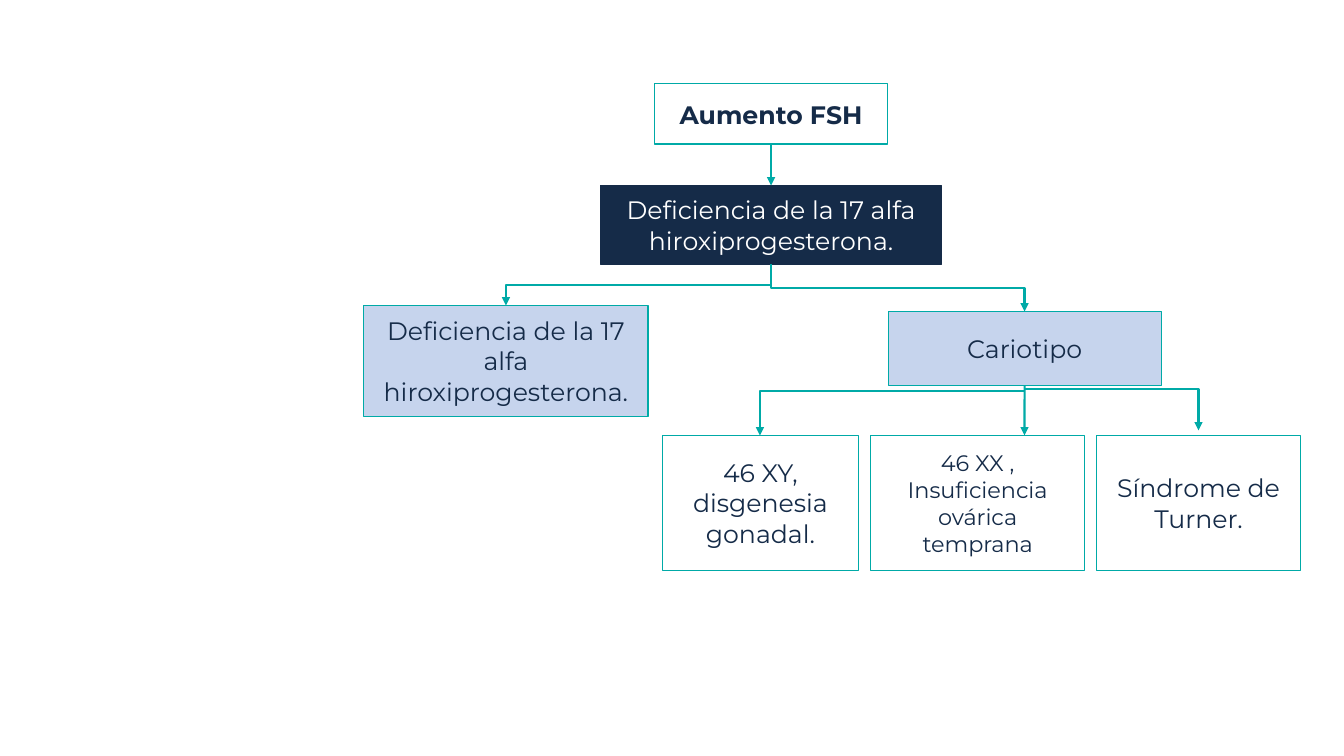
from lxml import etree
from pptx import Presentation
from pptx.dml.color import RGBColor
from pptx.enum.shapes import MSO_CONNECTOR, MSO_SHAPE
from pptx.enum.text import MSO_ANCHOR, PP_ALIGN
from pptx.oxml.ns import qn
from pptx.util import Pt

RECTANGLE = MSO_SHAPE.RECTANGLE
STRAIGHT, ELBOW = MSO_CONNECTOR.STRAIGHT, MSO_CONNECTOR.ELBOW
MIDDLE, CENTER = MSO_ANCHOR.MIDDLE, PP_ALIGN.CENTER
TOP, BOTTOM = 0, 2
COLORS = {"white": "FFFFFF", "navy": "152B48", "teal": "00AAA7", "blue": "8FAADC"}


def color(name):
    return RGBColor.from_string(COLORS[name])


def add_arrow(kind, begin_x, begin_y, end_x, end_y):
    arrow = page.shapes.add_connector(kind, Pt(begin_x), Pt(begin_y), Pt(end_x), Pt(end_y))
    arrow.line.color.rgb = color("teal")
    arrow.line.width = Pt(1.5)
    etree.SubElement(arrow.line._get_or_add_ln(), qn("a:tailEnd"), type="triangle")
    etree.SubElement(arrow._element.spPr, qn("a:effectLst"))
    return arrow


deck = Presentation()
deck.slide_width, deck.slide_height = Pt(960), Pt(540)
page = deck.slides.add_slide(deck.slide_layouts[6])

deficiency = "Deficiencia de la 17 alfa hiroxiprogesterona."
row_top, row_height = 311, 96.5
nodes = [
    ("Aumento FSH", 467.6, 59.8, 166.4, 43.2, "white", "teal", "navy", 18),
    (deficiency, 429.1, 132.5, 243.4, 56.2, "navy", "navy", "white", 18),
    (deficiency, 259.9, 218.2, 203, 79.2, "blue", "teal", "navy", 18),
    ("Cariotipo", 634.3, 222.5, 195.1, 52.6, "blue", "teal", "navy", 18),
    ("46 XX , Insuficiencia ovárica temprana", 622.1, row_top, 152.6, row_height, None, "teal", "navy", 16),
    ("Síndrome de Turner.", 783.4, row_top, 145.4, row_height, None, "teal", "navy", 18),
    ("46 XY, disgenesia gonadal.", 473, row_top, 140.4, row_height, None, "teal", "navy", 18),
]
boxes = []
for text, left, top, width, height, fill, outline, ink, size in nodes:
    box = page.shapes.add_shape(RECTANGLE, Pt(left), Pt(top), Pt(width), Pt(height))
    box.shadow.inherit = False
    if fill:
        box.fill.solid()
        box.fill.fore_color.rgb = color(fill)
    else:
        box.fill.background()
    if fill == "blue":
        tint = box._element.spPr.find(qn("a:solidFill")).find(qn("a:srgbClr"))
        etree.SubElement(tint, qn("a:alpha"), val="50000")
    box.line.color.rgb = color(outline)
    box.line.width = Pt(0.75)
    frame = box.text_frame
    frame.word_wrap = True
    frame.vertical_anchor = MIDDLE
    para = frame.paragraphs[0]
    para.text = text
    para.alignment = CENTER
    para.font.name = "Montserrat"
    para.font.size = Pt(size)
    para.font.color.rgb = color(ink)
    boxes.append(box)

increase, cause, karyotype = boxes[0], boxes[1], boxes[3]
increase.line.width = Pt(1)
increase.text_frame.paragraphs[0].font.bold = True

cause_x, cause_bottom = 550.8, 188.7
for end_x, end_y in [(731.8, 222.5), (361.4, 218.2)]:
    rightward = end_x > cause_x
    middle_x, middle_y = (cause_x + end_x) / 2, (cause_bottom + end_y) / 2
    half_drop = (end_y - cause_bottom) / 2
    half_span = abs(end_x - cause_x) / 2
    shift = half_drop if rightward else -half_drop
    branch = add_arrow(ELBOW, middle_x + shift, middle_y - half_span, middle_x - shift, middle_y + half_span)
    turn = 270 if rightward else 90
    branch._element.spPr.find(qn("a:xfrm")).set("rot", str(turn * 60000))

karyotype_x = 731.8
for begin_y, end_x, end_y in [(279.4, 542.9, row_top), (277.9, 856.1, 307.4)]:
    branch = add_arrow(ELBOW, karyotype_x, begin_y, end_x, end_y)
    branch._element.spPr.find(qn("a:prstGeom")).set("prst", "bentConnector2")

stem = add_arrow(STRAIGHT, karyotype_x, 275.1, karyotype_x, row_top)
stem.begin_connect(karyotype, BOTTOM)
stem = add_arrow(STRAIGHT, cause_x, 103, cause_x, 132.5)
stem.begin_connect(increase, BOTTOM)
stem.end_connect(cause, TOP)

deck.save("out.pptx")
